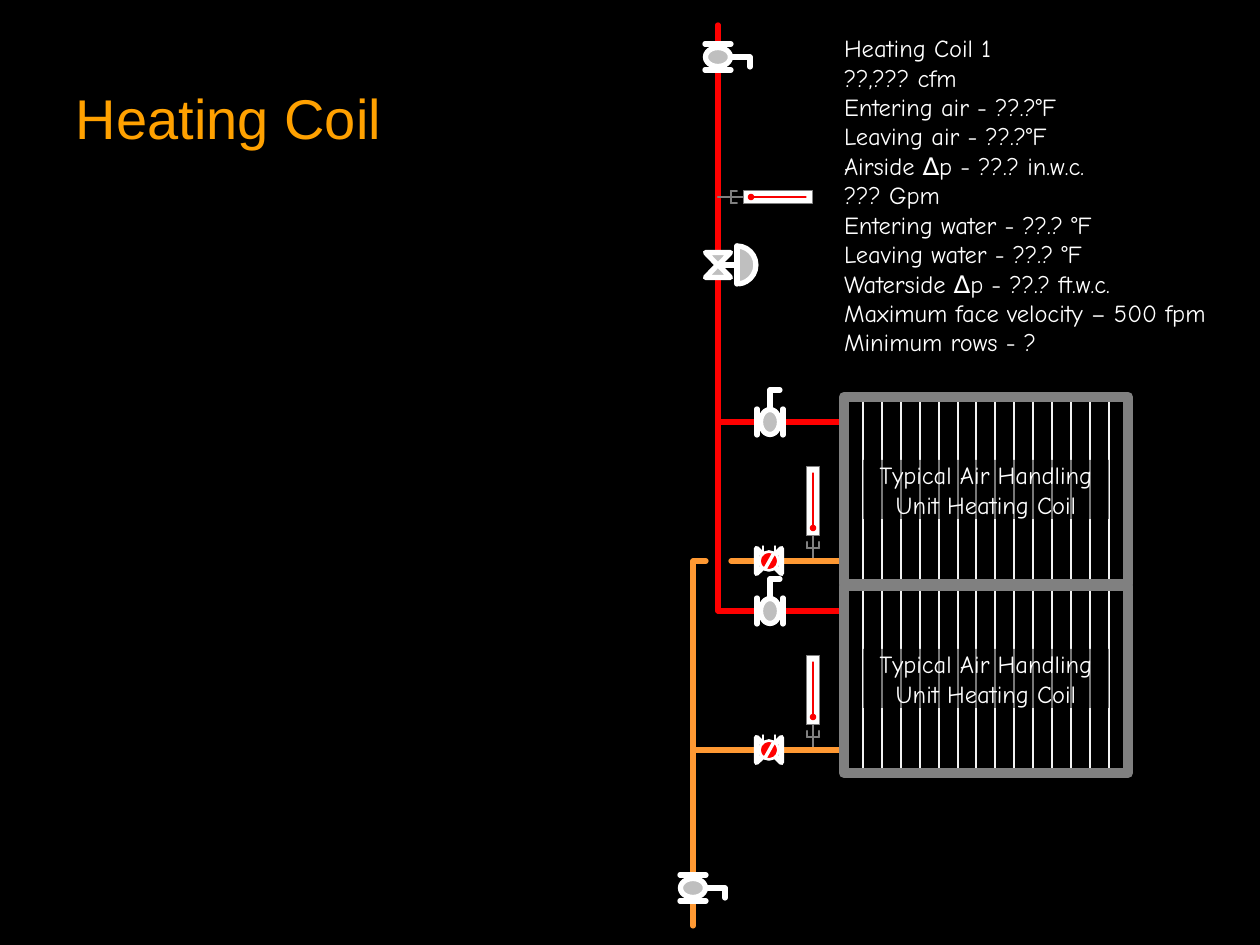
from lxml.etree import SubElement
from pptx import Presentation
from pptx.dml.color import RGBColor
from pptx.enum.shapes import MSO_CONNECTOR, MSO_SHAPE
from pptx.enum.text import MSO_ANCHOR, MSO_AUTO_SIZE, PP_ALIGN
from pptx.oxml.ns import qn
from pptx.util import Emu, Pt

SCALE = 914400 / 126
COLORS = {
    "back": "000000", "title": "FFA100", "text": "FFFFFF", "white": "FFFFFF",
    "supply": "FF0000", "return": "FF9933", "gray": "808080",
    "core": "BFBFBF", "fluid": "F90000", "fin": "F2F2F2",
}
NOTES = [
    "Heating Coil 1", "??,??? cfm", "Entering air - ??.?°F",
    "Leaving air - ??.?°F", "Airside ∆p - ??.? in.w.c.", "??? Gpm",
    "Entering water - ??.? °F", "Leaving water - ??.? °F",
    "Waterside ∆p - ??.? ft.w.c.", "Maximum face velocity – 500 fpm",
    "Minimum rows - ?",
]
LABEL = "Typical Air Handling Unit Heating Coil"
SUPPLY_X, RETURN_X = 718, 693
COIL_X, COIL_W, COIL_H = 844, 284, 187
COIL_TOPS = (397, 586)


def px(count):
    return Emu(round(count * SCALE))


def paint(name):
    return RGBColor.from_string(COLORS[name])


def stroke(line, color, width):
    line.color.rgb = paint(color)
    line.width = Pt(width)
    line._get_or_add_ln().set("cap", "rnd")


def write(frame, lines, size=14, font="Comic Neue", color="text",
          align=PP_ALIGN.LEFT, inset=0):
    frame.word_wrap = True
    frame.auto_size = MSO_AUTO_SIZE.NONE
    frame.vertical_anchor = MSO_ANCHOR.MIDDLE
    frame.margin_left = frame.margin_right = px(inset)
    frame.margin_top = frame.margin_bottom = 0
    frame.text = "\n".join(lines)
    for para in frame.paragraphs:
        para.alignment = align
        para.space_before = Pt(0)
        para.font.size = Pt(size)
        para.font.name = font
        para.font.color.rgb = paint(color)
        props = para._p.get_or_add_pPr()
        props.set("marL", "0")
        props.set("indent", "0")
        if props.find(qn("a:buNone")) is None:
            bullet = props.makeelement(qn("a:buNone"), {})
            props.insert_element_before(bullet, "a:tabLst", "a:defRPr", "a:extLst")


def place(shape, left, top, width, height):
    shape.left, shape.top = px(left), px(top)
    shape.width, shape.height = px(width), px(height)


def rule(slide, start, end, color, width):
    line = slide.shapes.add_connector(
        MSO_CONNECTOR.STRAIGHT, *map(px, (*start, *end)))
    stroke(line.line, color, width)
    SubElement(line._element.spPr, qn("a:effectLst"))


def block(slide, kind, box, fill=None, line=None, width=1):
    shape = slide.shapes.add_shape(kind, *map(px, box))
    shape.shadow.inherit = False
    if fill:
        shape.fill.solid()
        shape.fill.fore_color.rgb = paint(fill)
    else:
        shape.fill.background()
    if line:
        stroke(shape.line, line, width)
    else:
        shape.line.fill.background()
    return shape


class Part:
    """A symbol around a point on a pipe; upright turns it 90° to the left."""

    def __init__(self, slide, x, y, upright=False):
        self.slide, self.x, self.y, self.upright = slide, x, y, upright

    def spot(self, u, v):
        return (self.x + v, self.y - u) if self.upright else (self.x + u, self.y + v)

    def rule(self, start, end, color="white", width=3):
        rule(self.slide, self.spot(*start), self.spot(*end), color, width)

    def block(self, kind, mid, size, fill="core", line="white", width=3, turn=0):
        x, y = self.spot(*mid)
        wide, high = size
        shape = block(self.slide, kind, (x - wide / 2, y - high / 2, wide, high),
                      fill, line, width)
        shape.rotation = (turn + 270 * self.upright) % 360
        return shape


def gauge(slide, x, y, upright=False):
    """Thermometer with its well on the pipe."""
    part = Part(slide, x, y, upright)
    part.block(MSO_SHAPE.RECTANGLE, (60, 0), (69, 13), "white", "gray", 1)
    part.rule((13, 0), (25, 0), "gray", 1)
    part.block(MSO_SHAPE.OVAL, (33, 0), (6, 6), "supply", "supply", 0.25, 45)
    part.rule((32, 0), (88, 0), "fluid", 0.75)
    part.rule((0, 0), (13, 0), "gray", 1.25)
    for side in (6, -6):
        part.rule((13, side), (19, side), "gray", 1.25)
    part.rule((13, 6), (13, -6), "gray", 1.25)


def shutoff(slide, x, y, upright=False):
    """Manual valve with a bent handle."""
    part = Part(slide, x, y, upright)
    for side in (13, -13):
        part.rule((-13, side), (13, side))
    part.rule((13, 0), (32, 0))
    part.rule((32, 0), (32, 10))
    part.block(MSO_SHAPE.OVAL, (0, 0), (25, 19))


def bowtie(part):
    for mid, turn in ((-6, 180), (6, 0)):
        part.block(MSO_SHAPE.ISOSCELES_TRIANGLE, (0, mid), (25, 13), turn=turn)


def control(slide, x, y):
    """Control valve with a domed actuator."""
    part = Part(slide, x, y)
    bowtie(part)
    part.rule((0, 0), (19, 0))
    dome = part.block(MSO_SHAPE.ARC, (19, 0), (38, 38))
    dome.adjustments[0], dome.adjustments[1] = 162, 49.61
    part.rule((19, -19), (19, 19))


def balance(slide, x, y):
    """Balancing valve with two test ports."""
    part = Part(slide, x, y, upright=True)
    for side in (-6, 6):
        part.rule((2, side), (15, side), "white", 0.75)
    bowtie(part)
    part.block(MSO_SHAPE.OVAL, (0, 0), (19, 19), "supply", "white", 1.5, 30)
    part.rule((-8, -4), (8, 5), "white", 2)


def coil(slide, top):
    for fin in range(14):
        x = round(863 + 18.9 * fin)
        rule(slide, (x, top + COIL_H), (x, top), "fin", 0.75)
    block(slide, MSO_SHAPE.RECTANGLE, (COIL_X, top, COIL_W, COIL_H),
          line="gray", width=6)
    label = block(slide, MSO_SHAPE.RECTANGLE, (863, top + 63, 246, 59), "back")
    tint = label._element.spPr.find(qn("a:solidFill"))[0]
    SubElement(tint, qn("a:alpha"), val="50000")
    write(label.text_frame, [LABEL], align=PP_ALIGN.CENTER)


def branch(slide, top, start):
    """One coil with its supply and return pipes and their fittings."""
    feed, drain = top + 25, top + 164
    gauge(slide, 813, drain, upright=True)
    rule(slide, (SUPPLY_X, feed), (COIL_X, feed), "supply", 3)
    rule(slide, (start, drain), (839, drain), "return", 3)
    coil(slide, top)
    balance(slide, 769, drain)
    shutoff(slide, 770, feed, upright=True)


def main():
    deck = Presentation()
    deck.slide_width, deck.slide_height = px(1260), px(945)
    slide = deck.slides.add_slide(deck.slide_layouts[1])
    slide.background.fill.solid()
    slide.background.fill.fore_color.rgb = paint("back")

    title, body = slide.placeholders
    place(title, 63, 38, 1134, 158)
    write(title.text_frame, ["Heating Coil"], size=32, font="Arial",
          color="title", inset=13)
    place(body, 844, 32, 393, 326)
    write(body.text_frame, NOTES)

    first, second = COIL_TOPS
    rule(slide, (SUPPLY_X, second + 25), (SUPPLY_X, 25), "supply", 3)
    rule(slide, (RETURN_X, 926), (RETURN_X, first + 164), "return", 3)
    rule(slide, (RETURN_X, first + 164), (706, first + 164), "return", 3)
    gauge(slide, SUPPLY_X, 197)
    control(slide, SUPPLY_X, 265)
    shutoff(slide, SUPPLY_X, 57)
    branch(slide, first, 731)
    branch(slide, second, RETURN_X)
    shutoff(slide, RETURN_X, 888)
    deck.save("out.pptx")


if __name__ == "__main__":
    main()
